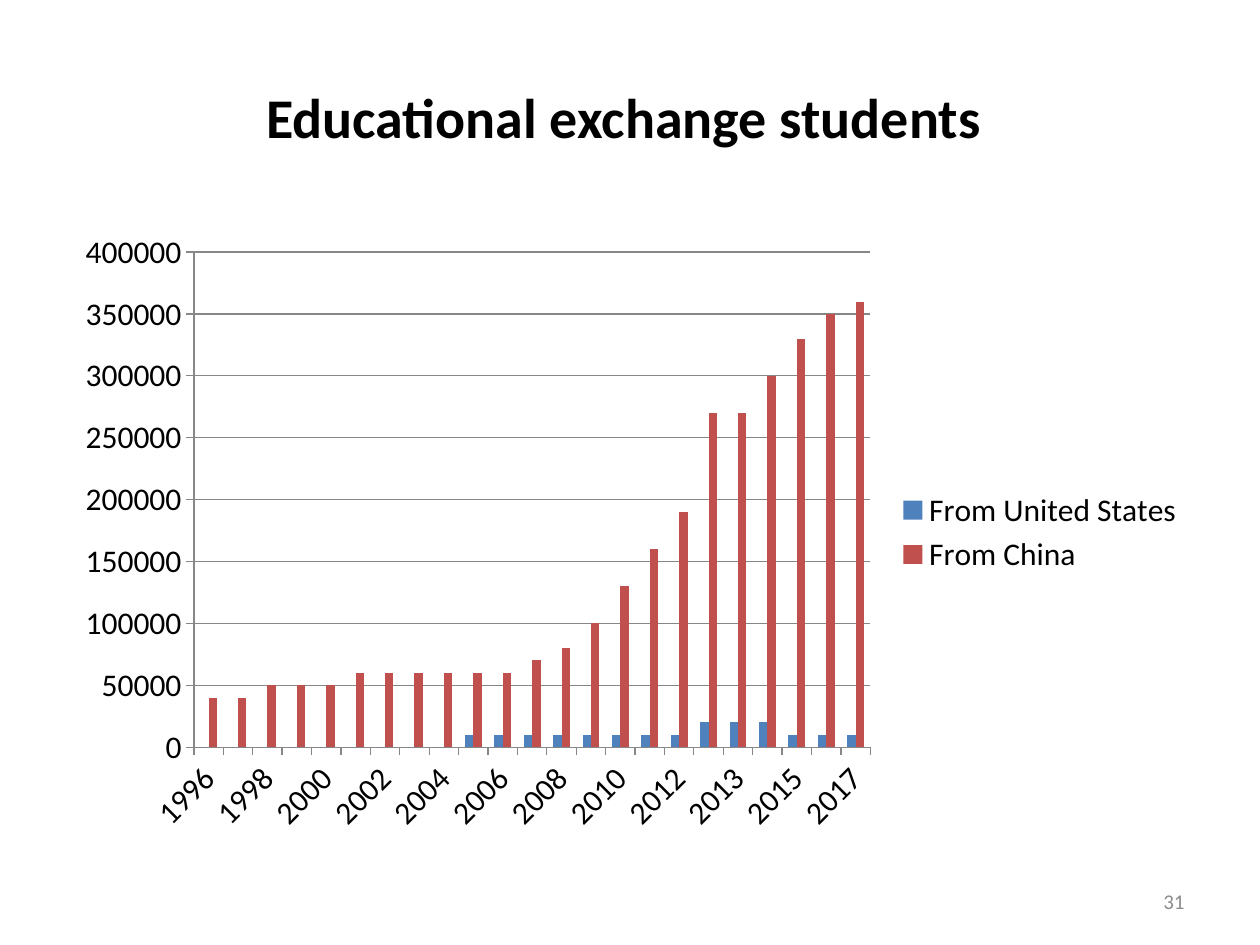
from pptx import Presentation
from pptx.chart.data import CategoryChartData
from pptx.dml.color import RGBColor
from pptx.enum.chart import XL_CHART_TYPE, XL_LEGEND_POSITION, XL_TICK_MARK
from pptx.enum.text import MSO_ANCHOR, PP_ALIGN
from pptx.util import Inches, Pt

COLUMNS = XL_CHART_TYPE.COLUMN_CLUSTERED
LEGEND_RIGHT = XL_LEGEND_POSITION.RIGHT
TICK_OUT = XL_TICK_MARK.OUTSIDE
MIDDLE = MSO_ANCHOR.MIDDLE
CENTER, RIGHT = PP_ALIGN.CENTER, PP_ALIGN.RIGHT

COLORS = {"text": "000000", "number": "8C8C8C", "axis": "878787",
          "From United States": "4F81BD", "From China": "C0504D"}

YEARS = [*range(1996, 2013), *range(2012, 2018)]
TEN_THOUSANDS = {
    "From United States": [0] * 9 + [1] * 8 + [2] * 3 + [1] * 3,
    "From China": [4, 4, 5, 5, 5, 6, 6, 6, 6, 6, 6, 7, 8, 10, 13, 16, 19,
                   27, 27, 30, 33, 35, 36],
}


class SlideBuilder:
    font = "Calibri"
    width, height = Inches(10), Inches(7.5)

    def __init__(self, deck):
        deck.slide_width, deck.slide_height = self.width, self.height
        self.page = deck.slides.add_slide(deck.slide_layouts[6])

    def area(self, left, top, width, height):
        return (round(left * self.width), round(top * self.height),
                round(width * self.width), round(height * self.height))

    def style_font(self, font, size, color="text", bold=False):
        font.name, font.size, font.bold = self.font, Pt(size), bold
        font.color.rgb = RGBColor.from_string(COLORS[color])

    def text(self, words, area, size, align, color="text", bold=False):
        frame = self.page.shapes.add_textbox(*self.area(*area)).text_frame
        frame.word_wrap = True
        frame.vertical_anchor = MIDDLE
        para = frame.paragraphs[0]
        para.text, para.alignment = words, align
        self.style_font(para.font, size, color, bold)

    def column_chart(self, categories, values, area, size):
        data = CategoryChartData(number_format="General")
        data.categories = [str(category) for category in categories]
        for name, counts in values.items():
            data.add_series(name, [count * 10000 for count in counts])
        chart = self.page.shapes.add_chart(COLUMNS, *self.area(*area), data).chart
        self.style_font(chart.font, size)
        chart.has_title = False
        chart.has_legend = True
        chart.legend.position = LEGEND_RIGHT
        chart.legend.include_in_layout = False
        plot = chart.plots[0]
        plot.gap_width, plot.vary_by_categories = 150, False
        for series in plot.series:
            series.format.fill.solid()
            series.format.fill.fore_color.rgb = RGBColor.from_string(COLORS[series.name])
        chart.value_axis.has_major_gridlines = True
        for axis in (chart.category_axis, chart.value_axis):
            axis.major_tick_mark = TICK_OUT
            self.style_line(axis.format.line)
        self.style_line(chart.value_axis.major_gridlines.format.line)

    def style_line(self, line):
        line.color.rgb = RGBColor.from_string(COLORS["axis"])
        line.width = Pt(0.75)


def main():
    deck = Presentation()
    slide = SlideBuilder(deck)
    slide.text("Educational exchange students ", (0.05, 0.04, 0.9, 1 / 6), 32, CENTER, bold=True)
    slide.column_chart(YEARS, TEN_THOUSANDS, (0.05, 7 / 30, 0.9, 0.66), 18)
    slide.text("31", (0.717, 0.927, 0.233, 0.053), 12, RIGHT, "number")
    deck.save("out.pptx")


if __name__ == "__main__":
    main()
